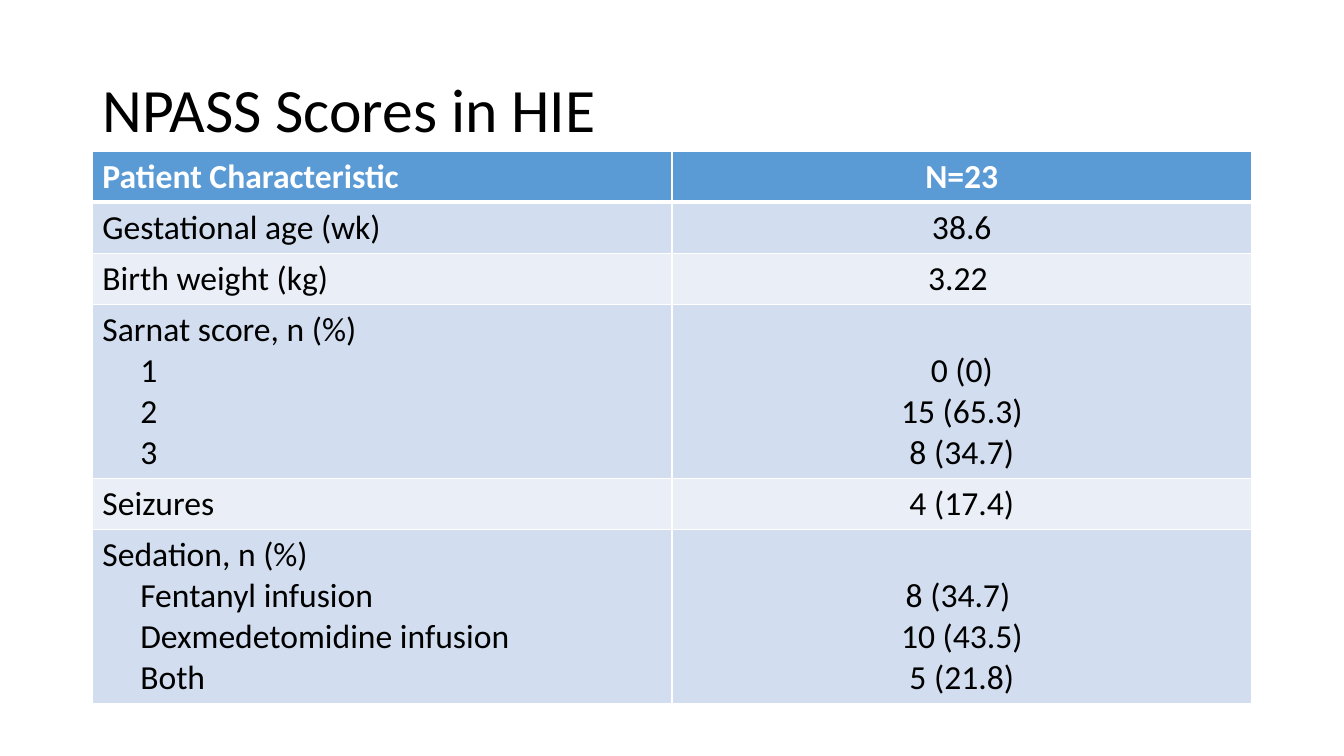
from dataclasses import dataclass

from lxml.etree import SubElement
from pptx import Presentation
from pptx.dml.color import RGBColor as RGB
from pptx.enum.text import MSO_ANCHOR as ANCHOR, MSO_AUTO_SIZE as AUTO, PP_ALIGN as ALIGN
from pptx.oxml.ns import qn
from pptx.util import Pt

PX = 9525


@dataclass(frozen=True)
class Theme:
    """Colours, font and type sizes."""
    font: str = "Calibri"
    text: str = "000000"
    white: str = "FFFFFF"
    header: str = "5B9BD5"
    bands: tuple = ("D2DEEF", "EAEFF7")
    title_size: int = 44
    cell_size: int = 24


THEME = Theme()
ROWS = [
    (["Patient Characteristic"], ["N=23"]),
    (["Gestational age (wk)"], ["38.6"]),
    (["Birth weight (kg)"], ["3.22 "]),
    (["Sarnat score, n (%)", "1", "2", "3"], ["0 (0)", "15 (65.3)", "8 (34.7)"]),
    (["Seizures"], ["4 (17.4)"]),
    (["Sedation, n (%)", "Fentanyl infusion", "Dexmedetomidine infusion", "Both"],
     ["8 (34.7) ", "10 (43.5)", "5 (21.8)"]),
]


def px(*lengths):
    """Turn pixel lengths into EMU."""
    return [n * PX for n in lengths]


def write(p, text, size, color=THEME.text, bold=False, align=ALIGN.LEFT, spacing=None, indent=0):
    """Put formatted text into a paragraph."""
    p.alignment = align
    if spacing:
        p.line_spacing = spacing
    if indent:
        p._p.get_or_add_pPr().set("marL", str(indent * PX))
    r = p.add_run()
    r.text = text
    r.font.name, r.font.size, r.font.bold = THEME.font, Pt(size), bold
    r.font.color.rgb = RGB.from_string(color)


def set_borders(cell, bottom):
    """Draw white cell borders with a given bottom width."""
    tc_pr = cell._tc.get_or_add_tcPr()
    for side, width in (("L", 1), ("R", 1), ("T", 1), ("B", bottom)):
        ln = SubElement(tc_pr, qn(f"a:ln{side}"), w=str(Pt(width)))
        fill = SubElement(ln, qn("a:solidFill"))
        SubElement(fill, qn("a:srgbClr"), val=THEME.white)


def fill_cell(cell, lines, fill, bottom=1, indent=0, **fmt):
    """Fill a cell with lines, indenting those after the first."""
    set_borders(cell, bottom)
    cell.fill.solid()
    cell.fill.fore_color.rgb = RGB.from_string(fill)
    tf = cell.text_frame
    for i, line in enumerate(lines):
        p = tf.add_paragraph() if i else tf.paragraphs[0]
        write(p, line, THEME.cell_size, indent=indent if i else 0, **fmt)


def add_title(slide, text, box):
    """Place the title in its box."""
    sp = slide.shapes.title
    sp.left, sp.top, sp.width, sp.height = px(*box)
    tf = sp.text_frame
    tf.auto_size, tf.word_wrap = AUTO.NONE, True
    tf.vertical_anchor = ANCHOR.MIDDLE
    write(tf.paragraphs[0], text, THEME.title_size, spacing=0.9)


def add_patient_table(slide, rows, box, pad=9, line=39, indent=36):
    """Place the characteristics table, each row as tall as its lines."""
    table = slide.shapes.add_table(len(rows), 2, *px(*box)).table
    for col in table.columns:
        col.width = box[2] * PX // 2
    for i, (labels, values) in enumerate(rows):
        table.rows[i].height = (pad + line * len(labels)) * PX
        if i:
            fmt = dict(fill=THEME.bands[(i - 1) % 2])
        else:
            fmt = dict(fill=THEME.header, color=THEME.white, bold=True, bottom=3)
        fill_cell(table.cell(i, 0), labels, indent=indent, **fmt)
        fill_cell(table.cell(i, 1), values, align=ALIGN.CENTER, **fmt)
        if len(values) < len(labels):
            table.cell(i, 1).vertical_anchor = ANCHOR.BOTTOM


def main():
    """Build and save the slide."""
    prs = Presentation()
    prs.slide_width, prs.slide_height = px(1280, 720)
    slide = prs.slides.add_slide(prs.slide_layouts[5])
    add_title(slide, "NPASS Scores in HIE", (88, 38, 1104, 139))
    add_patient_table(slide, ROWS, (88, 144, 1104, 518))
    prs.save("out.pptx")


if __name__ == "__main__":
    main()
